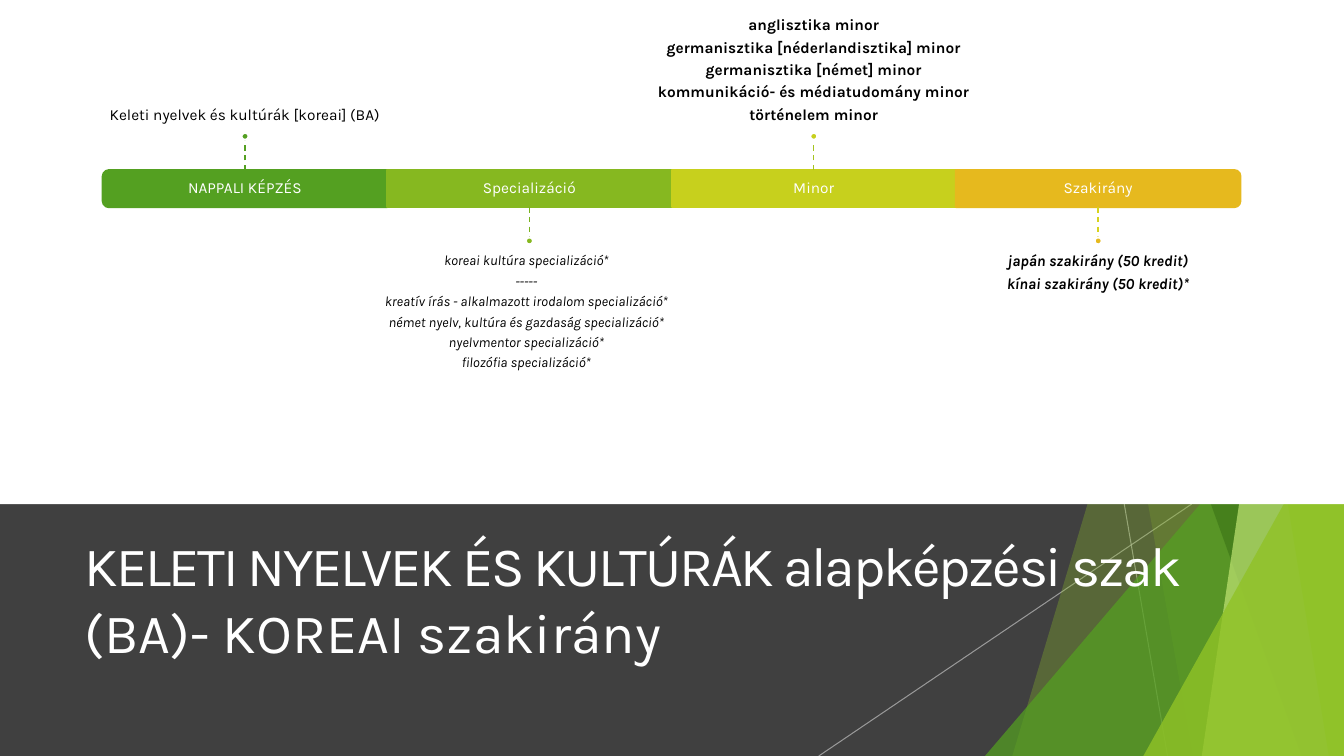
from lxml import etree
from pptx import Presentation
from pptx import util as u
from pptx.dml.color import RGBColor
from pptx.enum import dml, shapes, text
from pptx.oxml import ns

WHITE = RGBColor(0xFF, 0xFF, 0xFF)
BLACK = RGBColor(0, 0, 0)
CHARCOAL = RGBColor(0x40, 0x40, 0x40)
SILVER = RGBColor(0xBF, 0xBF, 0xBF)
LIME = RGBColor(0x90, 0xC2, 0x26)
GREEN = RGBColor(0x54, 0xA0, 0x21)
FOREST = RGBColor(0x3F, 0x78, 0x19)
PALE_LIME = RGBColor(0xC0, 0xE4, 0x74)
LEAF = RGBColor(0x86, 0xB8, 0x20)
LEAF_STEM = RGBColor(0x79, 0xB2, 0x20)
CITRUS = RGBColor(0xC7, 0xD0, 0x1D)
CITRUS_STEM = RGBColor(0xA5, 0xC4, 0x1F)
GOLD = RGBColor(0xE6, 0xB9, 0x1E)
GOLD_STEM = RGBColor(0xD7, 0xD3, 0x1D)
FONT = "Karla"

presentation = Presentation()
presentation.slide_width = u.Inches(13.33)
presentation.slide_height = u.Inches(7.5)
slide = presentation.slides.add_slide(presentation.slide_layouts[5])


def area(*shares):
    sides = (presentation.slide_width, presentation.slide_height)
    return [round(share * sides[index % 2] / 100) for index, share in enumerate(shares)]


def add_label(place, lines, anchor, colour, size=11, margins=(0, 0), bold=False, italic=False):
    frame = slide.shapes.add_textbox(*place).text_frame
    frame.word_wrap = True
    frame.vertical_anchor = anchor
    frame.margin_left = frame.margin_right = 0
    frame.margin_top, frame.margin_bottom = [u.Inches(margin) for margin in margins]
    for index, line in enumerate(lines):
        paragraph = frame.paragraphs[0] if index == 0 else frame.add_paragraph()
        paragraph.alignment = text.PP_ALIGN.CENTER
        paragraph.line_spacing = 0.9
        paragraph.space_after = u.Pt(0.38 * size)
        run = paragraph.add_run()
        run.text = line
        run.font.name, run.font.size = FONT, u.Pt(size)
        run.font.bold, run.font.italic = bold, italic
        run.font.color.rgb = colour


for top, height, colour in [(66.67, 33.33, CHARCOAL), (0, 66.67, WHITE)]:
    panel = slide.shapes.add_shape(shapes.MSO_SHAPE.RECTANGLE, *area(0, top, 100, height))
    panel.fill.solid()
    panel.fill.fore_color.rgb = colour
    panel.line.fill.background()
white_panel = panel

veiled = []
for top_x, bottom_x in [(83.65, 86.87), (88.67, 60.92)]:
    ray = slide.shapes.add_connector(
        shapes.MSO_CONNECTOR.STRAIGHT, *area(top_x, 66.67, bottom_x, 100))
    ray.line.color.rgb = SILVER
    ray.line.width = u.Pt(0.75)
    veiled.append((ray, 70))

beams = [
    (92.12, 75.32, 0, LIME, 30),
    (78.77, 88.75, 0, LIME, 20),
    (100, 73.29, 44.4, GREEN, 72),
    (76.59, 96.85, 0, FOREST, 70),
    (97.75, 89.42, 0, PALE_LIME, 70),
    (89.72, 98.87, 0, LIME, 65),
    (100, 85.07, 52.4, LIME, 80),
]
for top_x, bottom_x, top, colour, opacity in beams:
    if top:
        beam = slide.shapes.add_shape(
            shapes.MSO_SHAPE.ISOSCELES_TRIANGLE, *area(bottom_x, top, 100 - bottom_x, 100 - top))
        beam.adjustments[0] = 1
    else:
        builder = slide.shapes.build_freeform(*area(top_x, 0))
        builder.add_line_segments([area(100, 0), area(100, 100), area(bottom_x, 100)], close=True)
        beam = builder.convert_to_shape()
    beam.fill.solid()
    beam.fill.fore_color.rgb = colour
    beam.line.fill.background()
    veiled.append((beam, opacity))

for shape, opacity in veiled:
    colour_node = shape.element.xpath("./p:spPr//a:srgbClr")[0]
    etree.SubElement(colour_node, ns.qn("a:alpha"), val=str(opacity * 1000))

title = slide.shapes.title
title.left, title.top, title.width, title.height = area(5.55, 69.47, 92.65, 19.2)
title.text_frame.word_wrap = True
title.text_frame.auto_size = text.MSO_AUTO_SIZE.NONE
title.text_frame.vertical_anchor = text.MSO_ANCHOR.MIDDLE
paragraph = title.text_frame.paragraphs[0]
paragraph.alignment = text.PP_ALIGN.LEFT
for words, spacing in [("KELETI NYELVEK ÉS KULTÚRÁK alapképzési szak ", -160),
                       ("(BA)- KOREAI szakirány", 0)]:
    run = paragraph.add_run()
    run.text = words
    run.font.name, run.font.size = FONT, u.Pt(39.6)
    run.font.color.rgb = WHITE
    run.font._element.set("spc", str(spacing))

tree = title.element.getparent()
tree.append(title.element)
tree.append(white_panel.element)

BAND_LEFT, BAND_TOP, COLUMN, BAND_HEIGHT = 7.65, 22.5, 21.16, 4.9
STEM, DOT, CAPTION_WIDTH, CAPTION_HEIGHT = 4, 0.93, 35.26, 17.2
DOT_WIDTH = 0.53

stages = [
    ("NAPPALI KÉPZÉS", GREEN, GREEN, True, 270, 0, dict(size=11),
     ["Keleti nyelvek és kultúrák [koreai] (BA)"]),
    ("Specializáció", LEAF, LEAF_STEM, False, 0, -0.23, dict(size=10, italic=True),
     ["koreai kultúra specializáció*", "-----",
      "kreatív írás - alkalmazott irodalom specializáció*",
      "német nyelv, kultúra és gazdaság specializáció*",
      "nyelvmentor specializáció*", "filozófia specializáció*"]),
    ("Minor", CITRUS, CITRUS_STEM, True, 0, 0, dict(size=11, bold=True),
     ["anglisztika minor", "germanisztika [néderlandisztika] minor",
      "germanisztika [német] minor", "kommunikáció- és médiatudomány minor",
      "történelem minor"]),
    ("Szakirány", GOLD, GOLD_STEM, False, 90, 0, dict(size=11, bold=True, italic=True),
     ["japán szakirány (50 kredit)", "kínai szakirány (50 kredit)*"]),
]
for index, (name, colour, stem_colour, above, turn, shift, style, lines) in enumerate(stages):
    left = BAND_LEFT + index * COLUMN
    centre = left + COLUMN / 2
    place = area(left, BAND_TOP, COLUMN, BAND_HEIGHT)
    preset = shapes.MSO_SHAPE.ROUND_2_SAME_RECTANGLE if turn else shapes.MSO_SHAPE.RECTANGLE
    segment = slide.shapes.add_shape(preset, *place)
    if turn:
        segment.width, segment.height = place[3], place[2]
        segment.left = place[0] + (place[2] - place[3]) // 2
        segment.top = place[1] - (place[2] - place[3]) // 2
        segment.rotation = turn
    segment.fill.solid()
    segment.fill.fore_color.rgb = segment.line.color.rgb = colour
    segment.line.width = u.Pt(1.5)
    add_label(place, [name], text.MSO_ANCHOR.MIDDLE, WHITE, margins=(0.09, 0.09))

    if above:
        band_edge, stem_end = BAND_TOP, BAND_TOP - STEM
        dot_top = stem_end - DOT
        caption_top, anchor, margins = dot_top - CAPTION_HEIGHT, text.MSO_ANCHOR.BOTTOM, (0, 0.09)
    else:
        band_edge = BAND_TOP + BAND_HEIGHT
        dot_top = stem_end = band_edge + STEM
        caption_top, anchor, margins = dot_top + DOT, text.MSO_ANCHOR.TOP, (0.09, 0)
    add_label(area(centre + shift - CAPTION_WIDTH / 2, caption_top, CAPTION_WIDTH, CAPTION_HEIGHT),
              lines, anchor, BLACK, margins=margins, **style)

    stem = slide.shapes.add_connector(
        shapes.MSO_CONNECTOR.STRAIGHT, *area(centre, band_edge, centre, stem_end))
    if not turn:
        stem.begin_connect(segment, 0 if above else 2)
    stem.line.color.rgb = stem_colour
    stem.line.width = u.Pt(1)
    stem.line.dash_style = dml.MSO_LINE.DASH

    dot = slide.shapes.add_shape(
        shapes.MSO_SHAPE.OVAL, *area(centre - DOT_WIDTH / 2, dot_top, DOT_WIDTH, DOT))
    dot.fill.solid()
    dot.fill.fore_color.rgb = colour
    dot.line.color.rgb = WHITE
    dot.line.width = u.Pt(1.5)

for shape in slide.shapes:
    etree.SubElement(shape.element.spPr, ns.qn("a:effectLst"))

presentation.save("out.pptx")
